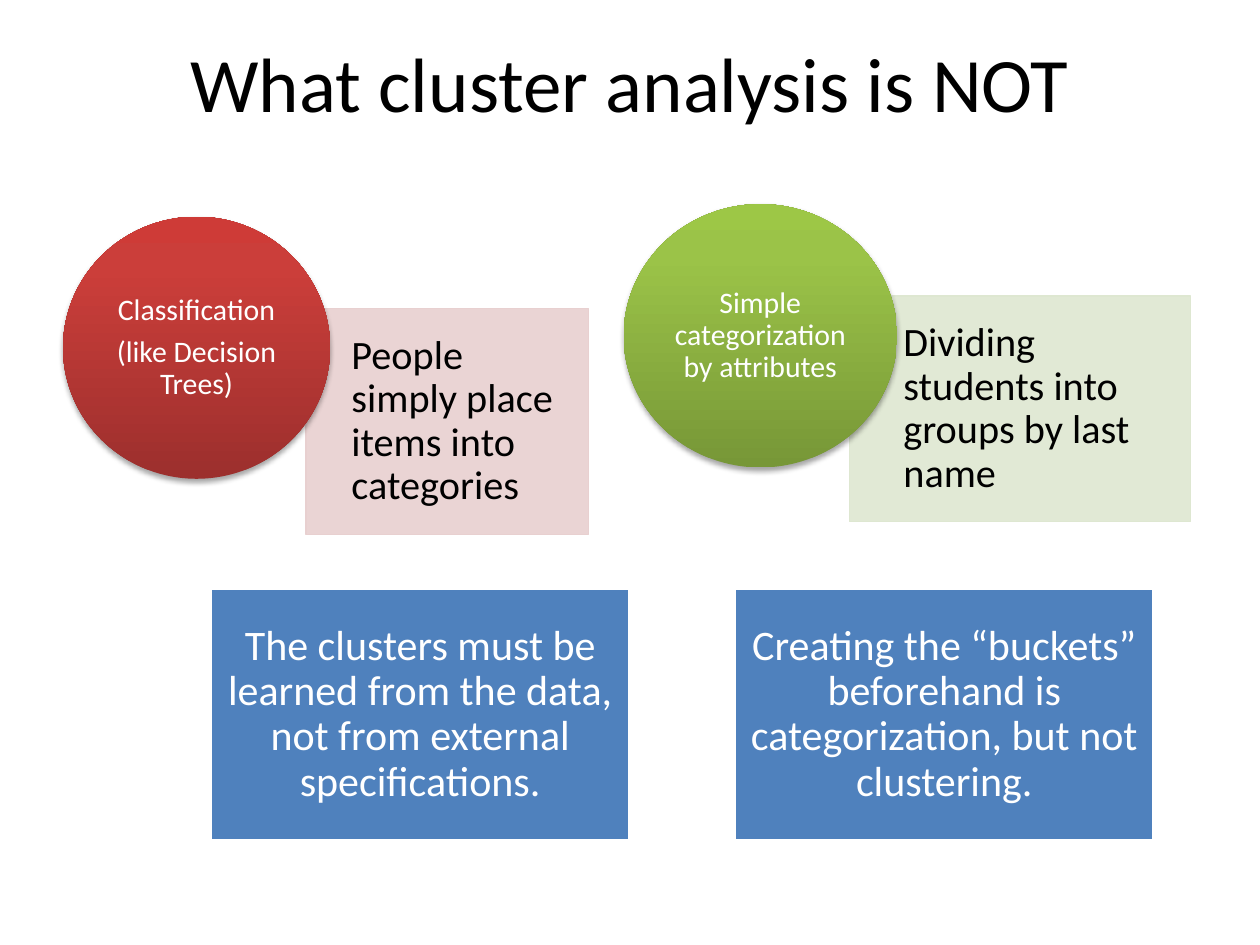
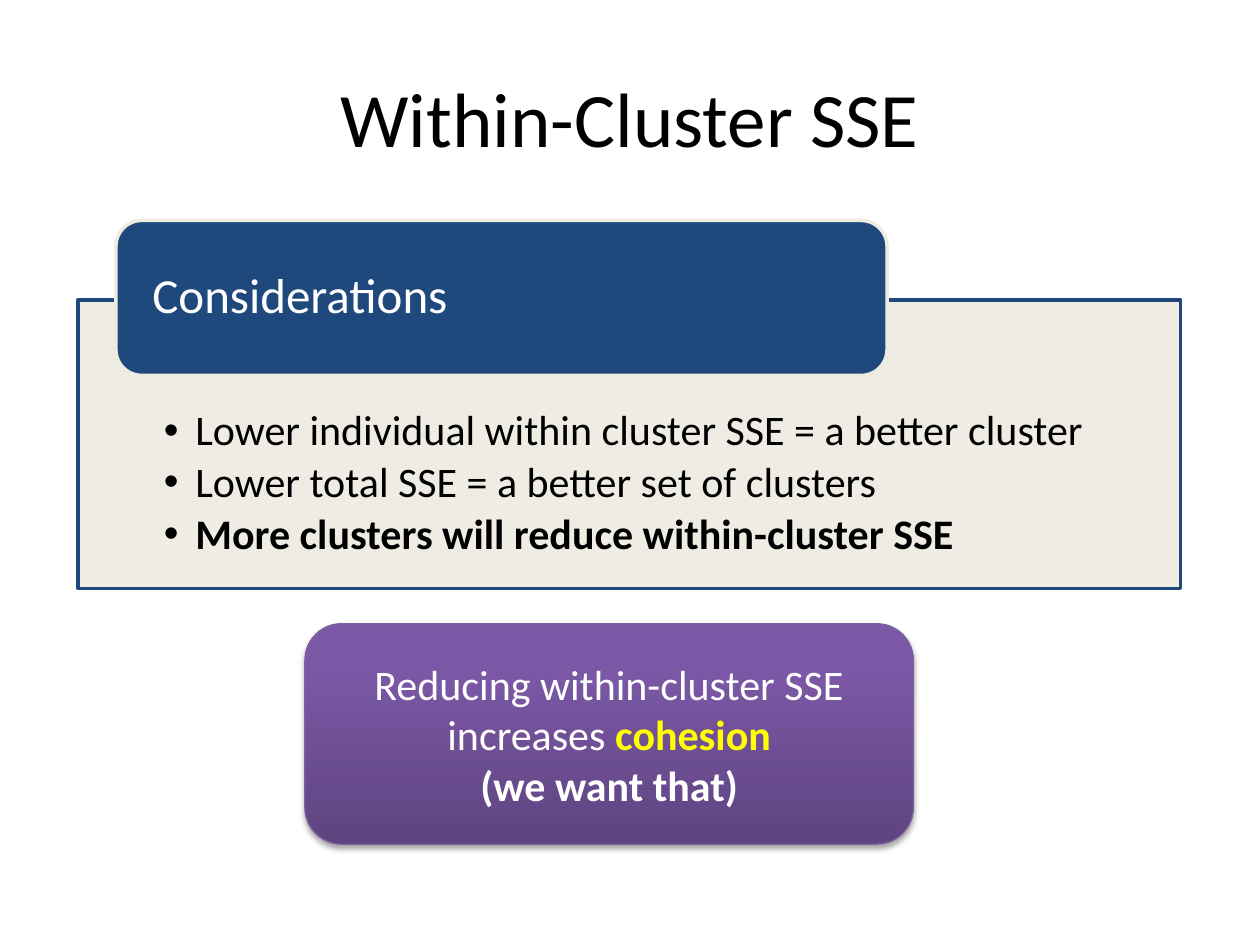
from lxml import etree
from pptx import Presentation
from pptx.dml.color import RGBColor
from pptx.enum.shapes import MSO_SHAPE
from pptx.enum.text import MSO_ANCHOR, PP_ALIGN
from pptx.oxml.ns import qn
from pptx.util import Inches, Pt

RECT, ROUNDED, ELLIPSE = MSO_SHAPE.RECTANGLE, MSO_SHAPE.ROUNDED_RECTANGLE, MSO_SHAPE.OVAL
LEFT, CENTER = PP_ALIGN.LEFT, PP_ALIGN.CENTER
TOP, MIDDLE = MSO_ANCHOR.TOP, MSO_ANCHOR.MIDDLE

FONT = "Calibri"
BLACK, WHITE, YELLOW = "000000", "FFFFFF", "FFFF00"
BLUE, NAVY, CREAM = "4F81BD", "1F497D", "EEECE1"
PINK, PALE_GREEN, PURPLE = "E8D0D0", "DEE7D1", "7D60A0"
# Gradients run from bottom to top, with stops at 0, 80 and 100 percent
STOPS = (0, 80, 100)
RED_GRADIENT = ("9C2F2D", "CB3E3A", "CE3B37")
GREEN_GRADIENT = ("779737", "9BC348", "9DC746")
PURPLE_GRADIENT = ("5F4480", "7B58A6", "7C57A8")

prs = Presentation()
prs.slide_width, prs.slide_height = Inches(10), Inches(7.5)
CELL = prs.slide_width / 10  # the slide is a grid of 10 columns by 7.5 rows


def add_panel(slide, outline, box, fill, line=None, line_width=0.75, opacity=100):
    """Add a shape; a tuple as fill means a gradient with a soft shadow."""
    panel = slide.shapes.add_shape(outline, *(round(v * CELL) for v in box))
    panel.shadow.inherit = False
    properties = panel._element.spPr
    if isinstance(fill, tuple):
        panel.fill.gradient()
        panel.fill.gradient_angle = 90
        stops = properties.find(".//" + qn("a:gsLst"))
        for stop in list(stops):
            stops.remove(stop)
        for percent, colour in zip(STOPS, fill):
            stop = etree.SubElement(stops, qn("a:gs"), pos=str(percent * 1000))
            etree.SubElement(stop, qn("a:srgbClr"), val=colour)
        shadow = etree.SubElement(
            properties.find(qn("a:effectLst")), qn("a:outerShdw"), blurRad=str(Pt(3.1)),
            dist=str(Pt(1.8)), dir="5400000", rotWithShape="0")
        shade = etree.SubElement(shadow, qn("a:srgbClr"), val=BLACK)
        etree.SubElement(shade, qn("a:alpha"), val="35000")
    else:
        panel.fill.solid()
        panel.fill.fore_color.rgb = RGBColor.from_string(fill)
    if line:
        panel.line.color.rgb = RGBColor.from_string(line)
        panel.line.width = Pt(line_width)
    else:
        panel.line.fill.background()
    if opacity < 100:
        for colour in properties.findall(qn("a:solidFill") + "/" + qn("a:srgbClr")):
            etree.SubElement(colour, qn("a:alpha"), val=str(opacity * 1000))
    return panel


def write(shape, lines, size, colour=WHITE, align=CENTER, anchor=MIDDLE,
          insets=(0.1, 0.05, 0.1, 0.05), spacing=0.9, gap=0.35):
    """Fill a shape with paragraphs; gap is the space after, as a share of size."""
    frame = shape.text_frame
    frame.text = "\n".join(lines)
    frame.word_wrap = True
    frame.vertical_anchor = anchor
    (frame.margin_left, frame.margin_top,
     frame.margin_right, frame.margin_bottom) = (round(v * CELL) for v in insets)
    for paragraph in frame.paragraphs:
        paragraph.alignment = align
        paragraph.line_spacing = spacing
        paragraph.space_after = Pt(size * gap)
        for run in paragraph.runs:
            run.font.name = FONT
            run.font.size = Pt(size)
            run.font.color.rgb = RGBColor.from_string(colour)
    return frame.paragraphs


slides = []
for title, title_top in (("What cluster analysis is NOT", 0.02), ("Within-Cluster SSE", 0.3)):
    slide = prs.slides.add_slide(prs.slide_layouts[6])
    heading = slide.shapes.add_textbox(
        *(round(v * CELL) for v in (0.5, title_top, 9, 1.25)))
    write(heading, [title], 44, BLACK, spacing=1.0, gap=0)
    slides.append(slide)
not_clustering, within_sse = slides

# Slide 1: two misconceptions, each with an example and a rebuttal
misconceptions = (
    (["Classification", "(like Decision Trees)"], (0.5, 1.72, 2.12, 2.08), RED_GRADIENT,
     "People simply place items into categories", (2.43, 2.45, 2.24, 1.79), PINK, 0.36),
    (["Simple categorization by attributes"], (4.95, 1.62, 2.17, 2.09), GREEN_GRADIENT,
     "Dividing students into groups by last name", (6.74, 2.35, 2.71, 1.79), PALE_GREEN, 0.43),
)
for name, circle_box, gradient, example, example_box, tint, indent in misconceptions:
    example_panel = add_panel(not_clustering, RECT, example_box, tint, tint, opacity=90)
    write(example_panel, [example], 23, BLACK, LEFT, insets=(indent, 0.18, 0.18, 0.18))
    circle = add_panel(not_clustering, ELLIPSE, circle_box, gradient)
    write(circle, name, 17, insets=(0, 0, 0, 0))

rebuttals = (
    "The clusters must be learned from the data, not from external specifications.",
    "Creating the “buckets” beforehand is categorization, but not clustering.",
)
for column, rebuttal in enumerate(rebuttals):
    rebuttal_box = (1.67 + column * 4.16, 4.67, 3.33, 2)
    rebuttal_panel = add_panel(not_clustering, RECT, rebuttal_box, BLUE, WHITE, 2)
    write(rebuttal_panel, [rebuttal], 24, insets=(0.1, 0.1, 0.1, 0.1))

# Slide 2: considerations and the conclusion drawn from them
considerations = add_panel(
    within_sse, RECT, (0.62, 2.38, 8.75, 2.29), CREAM, NAVY, 2, opacity=90)
points = write(considerations, [
    "Lower individual within cluster SSE = a better cluster",
    "Lower total SSE = a better set of clusters",
    "More clusters will reduce within-cluster SSE",
], 24, BLACK, LEFT, TOP, insets=(0.68, 0.87, 0.68, 0.19), gap=0.15)
for point in points:
    layout = point._p.get_or_add_pPr()
    layout.set("marL", str(Inches(0.25)))
    layout.set("indent", str(-Inches(0.25)))
    etree.SubElement(layout, qn("a:buFont"), typeface="Arial")
    etree.SubElement(layout, qn("a:buChar"), char="•")
points[-1].runs[0].font.bold = True

label = add_panel(within_sse, ROUNDED, (0.92, 1.75, 6.12, 1.23), NAVY, CREAM, 2)
write(label, ["Considerations"], 28, align=LEFT, insets=(0.23, 0, 0.23, 0))

conclusion = add_panel(
    within_sse, ROUNDED, (2.42, 4.95, 4.83, 1.75), PURPLE_GRADIENT, PURPLE)
effect, verdict = write(
    conclusion, ["Reducing within-cluster SSE increases ", "(we want that)"], 24,
    spacing=1.0, gap=0)
verdict.runs[0].font.bold = True
keyword = effect.add_run()
keyword.text = "cohesion"
keyword.font.name = FONT
keyword.font.size = Pt(24)
keyword.font.bold = True
keyword.font.color.rgb = RGBColor.from_string(YELLOW)

prs.save("out.pptx")
